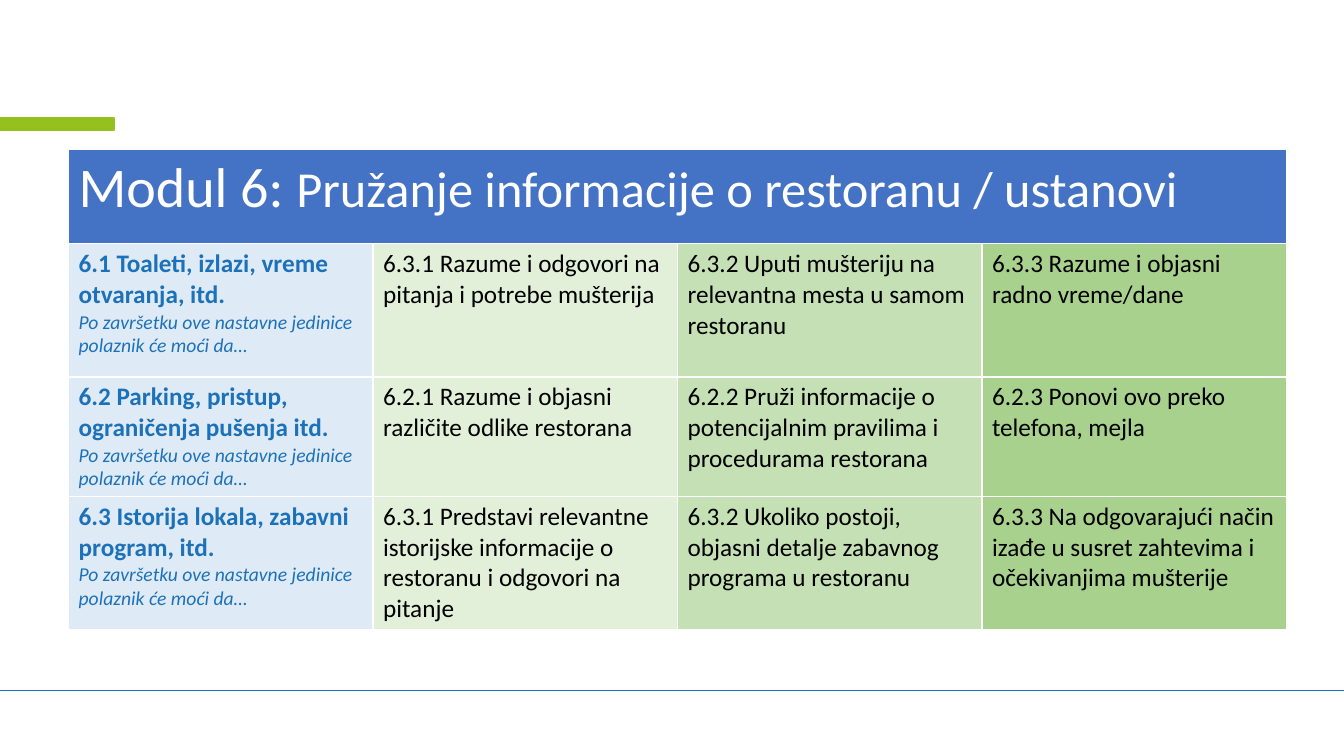
from lxml.etree import SubElement
from pptx import Presentation
from pptx.dml.color import RGBColor
from pptx.enum.shapes import MSO_CONNECTOR as Connector, MSO_SHAPE as Shape
from pptx.oxml.ns import qn
from pptx.util import Inches, Pt

HEADING = [("Modul 6: ", 40), ("Pružanje informacije o restoranu / ustanovi", 36)]
OUTCOME_LEAD = "Po završetku ove nastavne jedinice polaznik će moći da…"
UNITS = [
    ("6.1 Toaleti, izlazi, vreme otvaranja, itd.",
     "6.3.1 Razume i odgovori na pitanja i potrebe mušterija",
     "6.3.2 Uputi mušteriju na relevantna mesta u samom restoranu",
     "6.3.3 Razume i objasni radno vreme/dane"),
    ("6.2 Parking, pristup, ograničenja pušenja itd.",
     "6.2.1 Razume i objasni različite odlike restorana",
     "6.2.2 Pruži informacije o potencijalnim pravilima i procedurama restorana",
     "6.2.3 Ponovi ovo preko telefona, mejla"),
    ("6.3 Istorija lokala, zabavni program, itd.",
     "6.3.1 Predstavi relevantne istorijske informacije o restoranu i odgovori na pitanje",
     "6.3.2 Ukoliko postoji, objasni detalje zabavnog programa u restoranu",
     "6.3.3 Na odgovarajući način izađe u susret zahtevima i očekivanjima mušterije"),
]
COLUMN_FILLS = ["DEEBF7", "E2F0D9", "C5E0B4", "A9D18E"]
COLUMN_WIDTH = 3.02
ROW_HEIGHTS = [0.94, 1.32, 1.18, 1.32]
BLUE, GREEN, HEADER_BLUE = "1D71B8", "95C11F", "4472C4"
WHITE, BLACK = "FFFFFF", "000000"


def paint(target, color):
    """Give a fill one solid colour."""
    target.solid()
    target.fore_color.rgb = RGBColor.from_string(color)


def set_font(font, size, color, bold=False, italic=False):
    font.name = "Calibri"
    font.size = Pt(size)
    font.bold = bold
    font.italic = italic
    font.color.rgb = RGBColor.from_string(color)


def add_decor(page, width):
    rule = page.shapes.add_connector(
        Connector.STRAIGHT, 0, Inches(6.85), width, Inches(6.85))
    paint(rule.line.fill, BLUE)
    rule.line.width = Pt(1)
    SubElement(rule._element.spPr, qn("a:effectLst"))

    accent = page.shapes.add_shape(
        Shape.RECTANGLE, 0, Inches(1.17), Inches(1.13), Inches(0.12))
    accent.shadow.inherit = False
    paint(accent.fill, GREEN)
    paint(accent.line.fill, GREEN)
    accent.line.width = Pt(1)


def add_module_table(page):
    columns = len(COLUMN_FILLS)
    table = page.shapes.add_table(
        len(ROW_HEIGHTS), columns, Inches(0.68), Inches(1.48),
        Inches(COLUMN_WIDTH * columns), Inches(sum(ROW_HEIGHTS))).table
    for row, height in zip(table.rows, ROW_HEIGHTS):
        row.height = Inches(height)

    header = table.cell(0, 0)
    header.merge(table.cell(0, columns - 1))
    paint(header.fill, HEADER_BLUE)
    for text, size in HEADING:
        span = header.text_frame.paragraphs[0].add_run()
        span.text = text
        set_font(span.font, size, WHITE)

    for row, unit in enumerate(UNITS, start=1):
        for column, (text, fill) in enumerate(zip(unit, COLUMN_FILLS)):
            cell = table.cell(row, column)
            paint(cell.fill, fill)
            para = cell.text_frame.paragraphs[0]
            para.text = text
            is_unit = column == 0
            set_font(para.font, 18, BLUE if is_unit else BLACK, bold=is_unit)
            if is_unit:
                lead = cell.text_frame.add_paragraph()
                lead.text = OUTCOME_LEAD
                set_font(lead.font, 14, BLUE, italic=True)


def main():
    deck = Presentation()
    deck.slide_width, deck.slide_height = Inches(13.33), Inches(7.5)
    page = deck.slides.add_slide(deck.slide_layouts[6])
    add_decor(page, deck.slide_width)
    add_module_table(page)
    deck.save("out.pptx")


if __name__ == "__main__":
    main()
